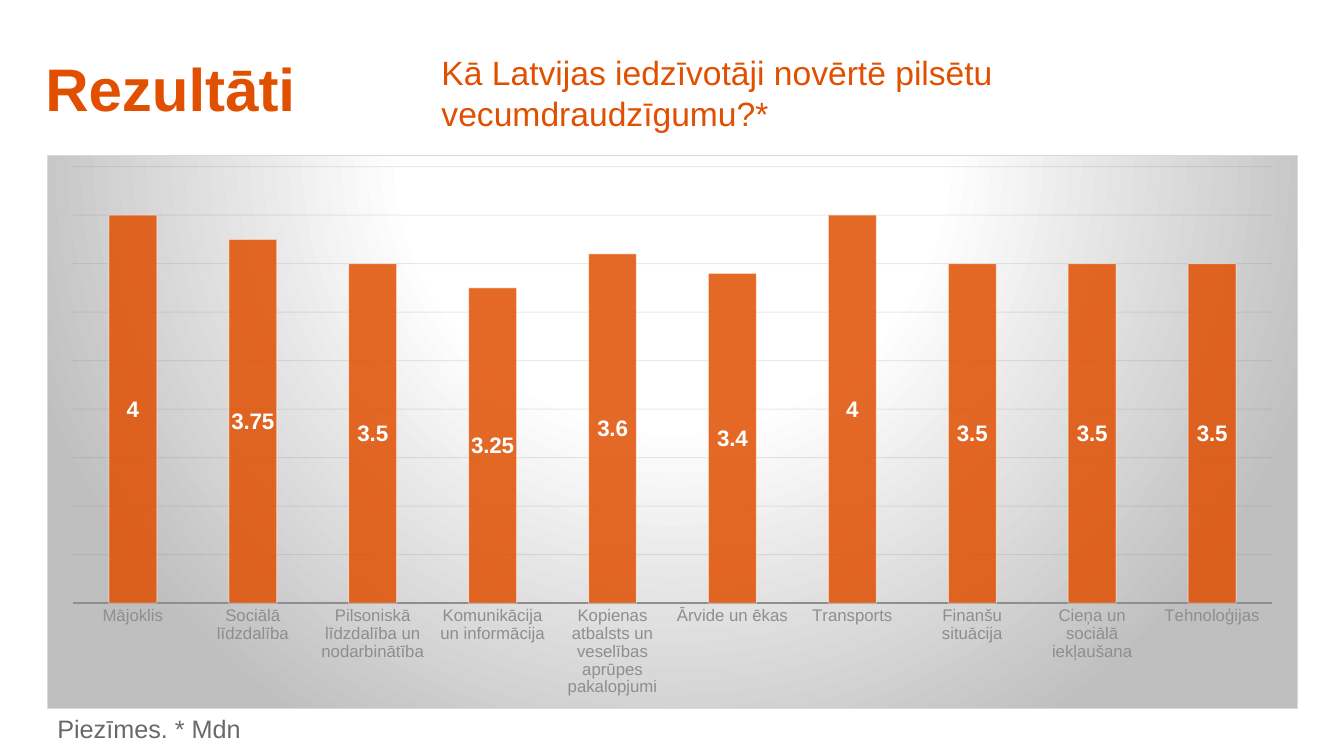
"""Builds the results slide with a column chart of age-friendliness ratings."""
from lxml import etree
from pptx import Presentation
from pptx.chart.data import CategoryChartData
from pptx.dml.color import RGBColor
from pptx.enum.chart import XL_CHART_TYPE, XL_LABEL_POSITION, XL_TICK_MARK
from pptx.enum.text import MSO_ANCHOR
from pptx.oxml import parse_xml
from pptx.oxml.ns import nsdecls, qn
from pptx.util import Inches, Pt

COLUMN_STACKED = XL_CHART_TYPE.COLUMN_STACKED
LABEL_CENTER = XL_LABEL_POSITION.CENTER
NO_TICK = XL_TICK_MARK.NONE
TOP, MIDDLE = MSO_ANCHOR.TOP, MSO_ANCHOR.MIDDLE

ORANGE = RGBColor(0xE1, 0x4F, 0x01)
GRAY = RGBColor(0x69, 0x69, 0x6B)
AXIS_GRAY = RGBColor(0x8E, 0x8E, 0x90)
GRID_GRAY = RGBColor(0x70, 0x70, 0x73)
WHITE = RGBColor(0xFF, 0xFF, 0xFF)

RATINGS = {
    "Mājoklis": 4,
    "Sociālā līdzdalība": 3.75,
    "Pilsoniskā līdzdalība un nodarbinātība": 3.5,
    "Komunikācija un informācija": 3.25,
    "Kopienas atbalsts un veselības aprūpes pakalopjumi": 3.6,
    "Ārvide un ēkas": 3.4,
    "Transports": 4,
    "Finanšu situācija": 3.5,
    "Cieņa un sociālā iekļaušana": 3.5,
    "Tehnoloģijas": 3.5,
}

CHART_FRAME = f"""<c:spPr {nsdecls("c", "a")}>
  <a:gradFill><a:gsLst>
    <a:gs pos="0"><a:srgbClr val="FFFFFF"/></a:gs>
    <a:gs pos="39000"><a:srgbClr val="FFFFFF"/></a:gs>
    <a:gs pos="100000"><a:srgbClr val="BFBFBF"/></a:gs>
  </a:gsLst><a:path path="circle">
    <a:fillToRect l="50000" t="-80000" r="50000" b="180000"/>
  </a:path></a:gradFill>
  <a:ln w="9525"><a:solidFill><a:srgbClr val="D9D9DA"/></a:solidFill></a:ln>
</c:spPr>"""

PLOT_LAYOUT = f"""<c:layout {nsdecls("c")}><c:manualLayout>
  <c:layoutTarget val="inner"/><c:xMode val="edge"/><c:yMode val="edge"/>
  <c:x val="0.02"/><c:y val="0.02"/><c:w val="0.96"/><c:h val="0.79"/>
</c:manualLayout></c:layout>"""


def format_font(font, size, color, bold=False):
    font.name, font.size, font.bold = "Arial", Pt(size), bold
    font.color.rgb = color


def format_line(line, color, width):
    line.color.rgb, line.width = color, Pt(width)


def write(para, text, size, color, bold=False):
    span = para.add_run()
    span.text = text
    format_font(span.font, size, color, bold)


def set_opacity(root, query, percent):
    for color in root.xpath(query):
        etree.SubElement(color, qn("a:alpha")).set("val", str(percent * 1000))


class Page:
    """Holds the deck and its slide; areas are percentages of the slide size."""

    def __init__(self):
        self.deck = Presentation()
        self.deck.slide_width, self.deck.slide_height = Inches(13.33), Inches(7.5)
        self.slide = self.deck.slides.add_slide(self.deck.slide_layouts[6])

    def place(self, left, top, width, height):
        across, down = self.deck.slide_width / 100, self.deck.slide_height / 100
        return (round(left * across), round(top * down),
                round(width * across), round(height * down))

    def text(self, area, text, size, color, bold=False, anchor=TOP, wrap=True, spacing=1.0):
        box = self.slide.shapes.add_textbox(*self.place(*area))
        frame = box.text_frame
        frame.word_wrap, frame.vertical_anchor = wrap, anchor
        para = frame.paragraphs[0]
        para.line_spacing = spacing
        write(para, text, size, color, bold)

    def column_chart(self, area, ratings):
        data = CategoryChartData()
        data.categories = list(ratings)
        data.add_series("Series 1", list(ratings.values()))
        chart = self.slide.shapes.add_chart(
            COLUMN_STACKED, *self.place(*area), data).chart
        chart.has_title = chart.has_legend = False
        format_font(chart.font, 10, GRAY)
        self.format_axes(chart)
        self.format_columns(chart.plots[0])

        root = chart.element
        set_opacity(root, ".//c:ser/c:spPr/a:solidFill/a:srgbClr", 85)
        set_opacity(root, ".//c:ser/c:spPr/a:ln//a:srgbClr", 50)
        set_opacity(root, ".//c:majorGridlines//a:srgbClr", 15)
        root.find(qn("c:chart")).addnext(parse_xml(CHART_FRAME))
        plot_area = root.find(".//" + qn("c:plotArea"))
        for layout in plot_area.findall(qn("c:layout")):
            plot_area.remove(layout)
        plot_area.insert(0, parse_xml(PLOT_LAYOUT))

    def format_axes(self, chart):
        categories, values = chart.category_axis, chart.value_axis
        categories.major_tick_mark = categories.minor_tick_mark = NO_TICK
        format_font(categories.tick_labels.font, 12, AXIS_GRAY)
        format_line(categories.format.line, AXIS_GRAY, 1.5)
        values.visible = False
        values.minimum_scale, values.maximum_scale = 0, 4.5
        values.major_unit = 0.5
        values.has_major_gridlines = True
        format_line(values.major_gridlines.format.line, GRID_GRAY, 0.75)

    def format_columns(self, plot):
        plot.gap_width, plot.overlap = 150, 100
        plot.vary_by_categories = False
        series = plot.series[0]
        series.invert_if_negative = False
        series.format.fill.solid()
        series.format.fill.fore_color.rgb = ORANGE
        format_line(series.format.line, WHITE, 0.75)
        labels = series.data_labels
        labels.show_value, labels.position = True, LABEL_CENTER
        format_font(labels.font, 16, WHITE, bold=True)


def main():
    page = Page()
    page.text((2.63, 0, 37.66, 22.13), "Rezultāti", 42.9, ORANGE,
              bold=True, anchor=MIDDLE, spacing=1.1)
    page.text((32.11, 6.27, 50.04, 12.13),
              "Kā Latvijas iedzīvotāji novērtē pilsētu vecumdraudzīgumu?*", 24, ORANGE)
    page.text((3.53, 93.73, 15.3, 5.33), "Piezīmes. * Mdn", 18, GRAY, wrap=False)
    page.column_chart((3.53, 20.53, 93.02, 73.2), RATINGS)
    page.deck.save("out.pptx")


if __name__ == "__main__":
    main()
